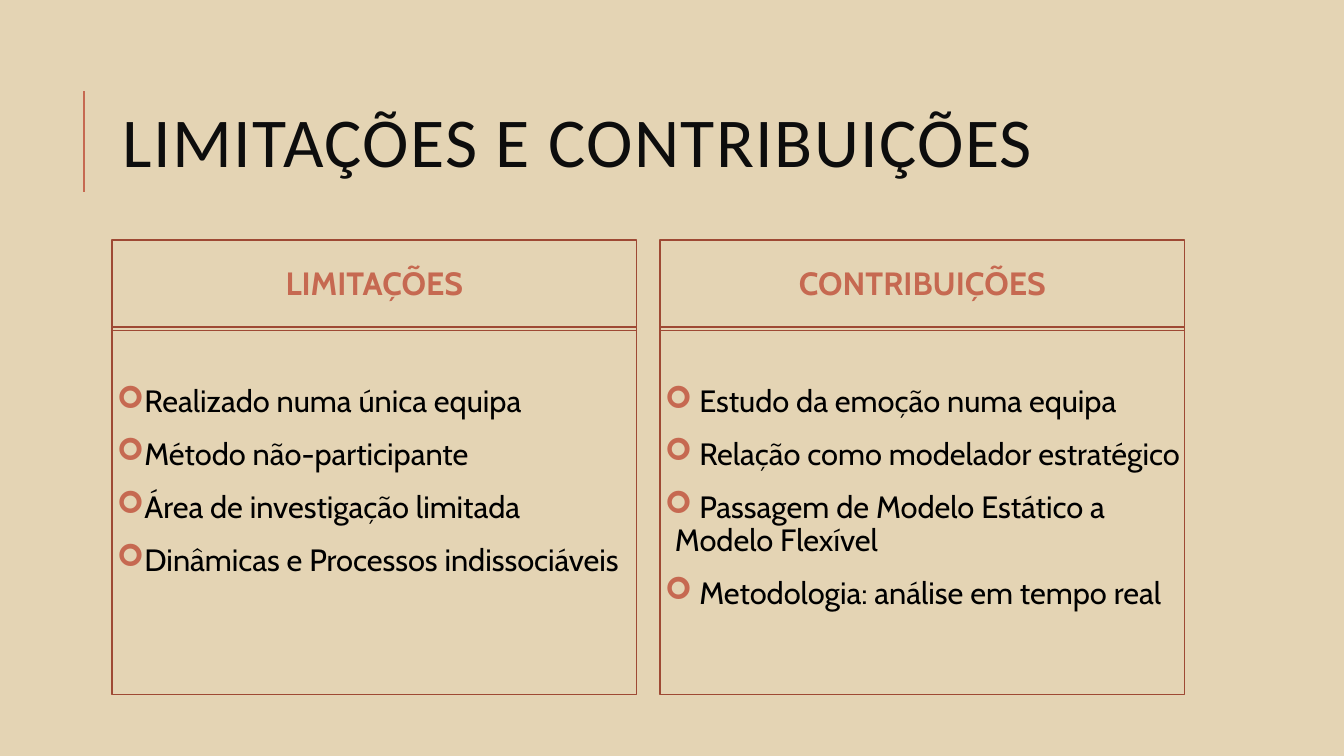
import pptx
import pptx.dml.color
import pptx.enum.shapes
import pptx.enum.text
import pptx.oxml
import pptx.oxml.ns
import pptx.util
from lxml import etree

PX = 914400 / 100.8
ACCENT, BORDER, INK, BLACK = "C66951", "9E4934", "0D0D0D", "000000"
BACKGROUND = "E4D4B4"
ANCHOR = pptx.enum.text.MSO_ANCHOR
ALIGN = pptx.enum.text.PP_ALIGN

COLUMNS = [
    ("LIMITAÇÕES", [
        "Realizado numa única equipa",
        "Método não-participante",
        "Área de investigação limitada",
        "Dinâmicas e Processos indissociáveis",
    ]),
    ("CONTRIBUIÇÕES", [
        " Estudo da emoção numa equipa",
        " Relação como modelador estratégico",
        " Passagem de Modelo Estático a Modelo Flexível",
        " Metodologia: análise em tempo real",
    ]),
]


def px(n):
    return pptx.util.Emu(round(n * PX))


def rgb(value):
    return pptx.dml.color.RGBColor.from_string(value)


def sub(parent, tag, **attrs):
    return etree.SubElement(parent, pptx.oxml.ns.qn(tag), attrs)


def add_bullet(p, char, color):
    """Give the paragraph a hanging, coloured bullet."""
    pPr = p._p.get_or_add_pPr()
    pPr.set("marL", str(px(10)))
    pPr.set("indent", str(-px(10)))
    sub(sub(pPr, "a:buClr"), "a:srgbClr", val=color)
    sub(pPr, "a:buFont", typeface="Wingdings")
    sub(pPr, "a:buChar", char=char)


def write(sp, lines, size, color, font="Cabin", bold=False, align=ALIGN.LEFT,
          anchor=ANCHOR.MIDDLE, insets=(10, 5, 10, 5), line_spacing=0.9,
          before=0, after=0, bullet=None, tracking=0):
    """Fill a shape with one paragraph per line; before skips the first one."""
    tf = sp.text_frame
    tf.word_wrap = True
    tf.vertical_anchor = anchor
    tf.margin_left, tf.margin_top, tf.margin_right, tf.margin_bottom = map(px, insets)
    for i, line in enumerate(lines):
        p = tf.add_paragraph() if i else tf.paragraphs[0]
        p.alignment = align
        p.line_spacing = line_spacing
        p.space_before = pptx.util.Pt(before if i else 0)
        p.space_after = pptx.util.Pt(after)
        if bullet:
            add_bullet(p, bullet, ACCENT)
        r = p.add_run()
        r.text = line
        r.font.name, r.font.size, r.font.bold = font, pptx.util.Pt(size), bold
        r.font.color.rgb = rgb(color)
        if tracking:
            r._r.get_or_add_rPr().set("spc", str(tracking * 100))


def outlined_box(slide, x, y, w, h):
    sp = slide.shapes.add_shape(pptx.enum.shapes.MSO_SHAPE.RECTANGLE,
                                px(x), px(y), px(w), px(h))
    sp.shadow.inherit = False
    sp.fill.background()
    sp.line.color.rgb = rgb(BORDER)
    sp.line.width = pptx.util.Pt(0.75)
    return sp


def title_region(slide, x, y, w, h):
    """Title with an accent rule to its left."""
    rule_x, rule_y = x - 29, y + 26
    rule = slide.shapes.add_connector(pptx.enum.shapes.MSO_CONNECTOR.STRAIGHT,
                                      px(rule_x), px(rule_y + 101), px(rule_x), px(rule_y))
    rule.line.color.rgb = rgb(ACCENT)
    rule.line.width = pptx.util.Pt(1.5)
    sub(rule._element.spPr, "a:effectLst")
    sp = slide.shapes.add_textbox(px(x), px(y), px(w), px(h))
    write(sp, ["LIMITAÇÕES E CONTRIBUIÇÕES"], 50, INK, font="Calibri",
          line_spacing=0.8, tracking=1)


def column(slide, x, y, w, h, heading, items):
    """Heading box above a bulleted box, overlapping by a few px."""
    head_h, overlap = 91, 4
    write(outlined_box(slide, x, y, w, head_h), [heading], 23, ACCENT,
          bold=True, align=ALIGN.CENTER, insets=(15, 5, 15, 5))
    body_y = y + head_h - overlap
    write(outlined_box(slide, x, body_y, w, y + h - body_y), items, 22, BLACK,
          anchor=ANCHOR.TOP, insets=(5, 59, 5, 5), before=12, after=2, bullet="➢")


def main():
    prs = pptx.Presentation()
    prs.slide_width, prs.slide_height = px(1344), px(756)
    slide = prs.slides.add_slide(prs.slide_layouts[6])
    fill = slide.background.fill
    fill.solid()
    fill.fore_color.rgb = rgb(BACKGROUND)

    left, width, gap = 112, 525, 23
    title_region(slide, left + 1, 65, 2 * width + gap, 165)
    for i, (heading, items) in enumerate(COLUMNS):
        column(slide, left + i * (width + gap), 240, width, 455, heading, items)
    prs.save("out.pptx")


if __name__ == "__main__":
    main()
